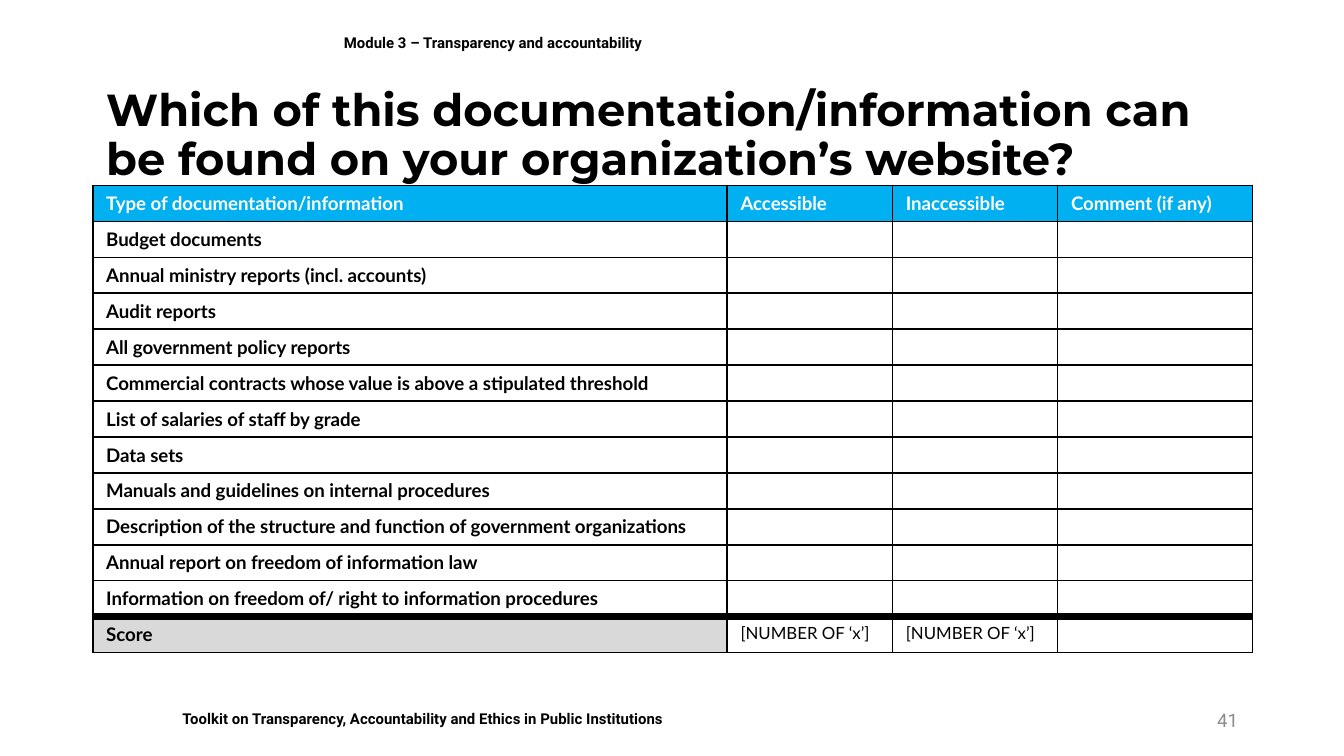
from lxml.etree import SubElement
from pptx import Presentation
from pptx.dml.color import RGBColor
from pptx.enum.text import MSO_ANCHOR as Anchor, MSO_AUTO_SIZE as AutoSize, PP_ALIGN as Align
from pptx.oxml.ns import qn
from pptx.util import Inches, Pt

BLACK = RGBColor(0x00, 0x00, 0x00)
WHITE = RGBColor(0xFF, 0xFF, 0xFF)
BLUE = RGBColor(0x00, 0xB0, 0xF0)
LIGHT_GRAY = RGBColor(0xD9, 0xD9, 0xD9)
NUMBER_GRAY = RGBColor(0x8C, 0x8C, 0x8C)

HEADINGS = ["Type of documentation/information", "Accessible", "Inaccessible", "Comment (if any)"]
DOCUMENTS = [
    "Budget documents",
    "Annual ministry reports (incl. accounts)",
    "Audit reports",
    "All government policy reports",
    "Commercial contracts whose value is above a stipulated threshold",
    "List of salaries of staff by grade",
    "Data sets",
    "Manuals and guidelines on internal procedures",
    "Description of the structure and function of government organizations",
    "Annual report on freedom of information law",
    "Information on freedom of/ right to information procedures",
]
SCORE = ["Score", "[NUMBER OF ‘x’]", "[NUMBER OF ‘x’]", ""]
COLUMN_WIDTHS = [4.72, 1.23, 1.23, 1.45]
ROW_HEIGHT = 0.26
THIN, THICK = 1, 4.5


def format_text(para, font_name, size, color, bold=False):
    for span in para.runs:
        span.font.name = font_name
        span.font.size = Pt(size)
        span.font.bold = bold
        span.font.color.rgb = color


def add_label(page, box, text, size, color, bold=True, anchor=Anchor.MIDDLE, align=Align.LEFT):
    label = page.shapes.add_textbox(*map(Inches, box))
    frame = label.text_frame
    frame.word_wrap = True
    frame.vertical_anchor = anchor
    frame.text = text
    para = frame.paragraphs[0]
    para.alignment = align
    format_text(para, "Roboto", size, color, bold)
    return label


def add_title(page, box, text):
    title = page.shapes.title
    title.left, title.top, title.width, title.height = map(Inches, box)
    frame = title.text_frame
    frame.auto_size = AutoSize.NONE
    frame.word_wrap = True
    frame.vertical_anchor = Anchor.MIDDLE
    frame.text = text
    para = frame.paragraphs[0]
    para.alignment = Align.LEFT
    para.line_spacing = 0.9
    format_text(para, "Montserrat", 24, BLACK, True)


def set_borders(cell, top, bottom):
    properties = cell._tc.get_or_add_tcPr()
    for side, width in (("L", THIN), ("R", THIN), ("T", top), ("B", bottom)):
        line = SubElement(properties, qn(f"a:ln{side}"), w=str(Pt(width)))
        fill = SubElement(line, qn("a:solidFill"))
        SubElement(fill, qn("a:srgbClr"), val=str(BLACK))


def fill_cell(cell, text, size, color, bold, background):
    if background is None:
        cell.fill.background()
    else:
        cell.fill.solid()
        cell.fill.fore_color.rgb = background
    para = cell.text_frame.paragraphs[0]
    if text:
        para.text = text
        format_text(para, "Lato", size, color, bold)
    else:
        SubElement(para._p, qn("a:endParaRPr"), sz=str(size * 100))


def add_checklist(page, box):
    rows = [HEADINGS] + [[name, "", "", ""] for name in DOCUMENTS] + [SCORE]
    last = len(rows) - 1
    table = page.shapes.add_table(len(rows), len(HEADINGS), *map(Inches, box)).table
    table.horz_banding = False
    for column, width in zip(table.columns, COLUMN_WIDTHS):
        column.width = Inches(width)
    for r, texts in enumerate(rows):
        table.rows[r].height = Inches(ROW_HEIGHT)
        for c, text in enumerate(texts):
            cell = table.cell(r, c)
            set_borders(cell, THICK if r == last else THIN, THICK if r == last - 1 else THIN)
            is_score = r == last and c > 0
            background = BLUE if r == 0 else LIGHT_GRAY if r == last and c == 0 else None
            fill_cell(cell, text, 9 if is_score else 10, WHITE if r == 0 else BLACK,
                      not is_score, background)


def add_footer(page, box):
    left, top, width, height = box
    footer = add_label(page, (left, top + 0.02, 7.17, 0.24),
                       "Toolkit on Transparency, Accountability and Ethics in Public Institutions",
                       8, BLACK, anchor=Anchor.TOP)
    footer.fill.solid()
    footer.fill.fore_color.rgb = WHITE
    add_label(page, (left + width - 2.25, top, 2.25, height), "41", 10, NUMBER_GRAY,
              bold=False, align=Align.RIGHT)


def main():
    deck = Presentation()
    deck.slide_width = Inches(10)
    deck.slide_height = deck.slide_width * 9 // 16
    page = deck.slides.add_slide(deck.slide_layouts[5])
    add_footer(page, (1.26, 5.21, 8.05, 0.3))
    add_checklist(page, (0.69, 1.38, sum(COLUMN_WIDTHS), ROW_HEIGHT * (len(DOCUMENTS) + 2)))
    add_label(page, (2.46, 0.1, 6.85, 0.44), "Module 3 – Transparency and accountability", 8, BLACK)
    add_title(page, (0.69, 0.64, 8.62, 0.75),
              "Which of this documentation/information can be found on your organization’s website?")
    deck.save("out.pptx")


if __name__ == "__main__":
    main()
